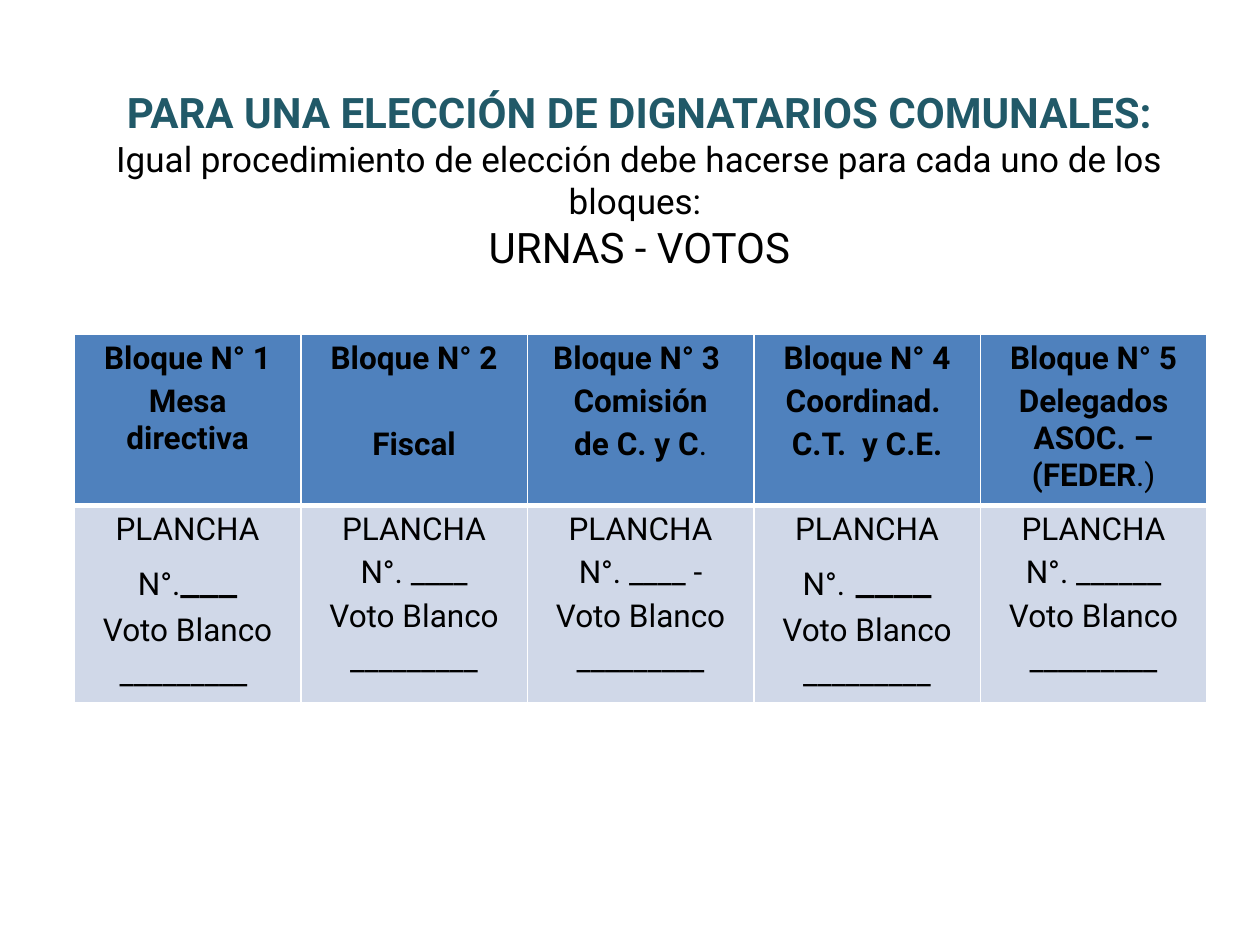
from dataclasses import dataclass
from typing import NamedTuple

from lxml.etree import SubElement
from pptx import Presentation
from pptx.dml.color import RGBColor as Rgb
from pptx.enum.text import MSO_ANCHOR as Anchor, PP_ALIGN as Align
from pptx.oxml.ns import qn
from pptx.util import Inches, Pt


@dataclass(frozen=True)
class Theme:
    font: str = "Roboto"
    ink: str = "000000"
    teal: str = "215968"
    head: str = "4F81BD"
    body: str = "D0D8E8"
    rule: str = "FFFFFF"
    big: int = 24
    mid: int = 20
    small: int = 18
    thin: int = 1
    thick: int = 3


THEME = Theme()
LINE = 1.17  # height of a line of the font, in ems


class Run(NamedTuple):
    text: str
    size: int = THEME.small
    bold: bool = False
    color: str = THEME.ink


class Block(NamedTuple):
    """One table column: header lines, then the ballot number and the blank vote."""
    head: list
    number: list
    blank: str = "_________"


def bold(text: str) -> list:
    return [Run(text, bold=True)]


BLOCKS = [
    Block([bold("Bloque N° 1"), bold("Mesa directiva")],
          [Run("N°."), Run("___", THEME.big)], "_________ "),
    Block([bold("Bloque N° 2"), [], bold("Fiscal")], [Run("N°. ____")]),
    Block([bold("Bloque N° 3 "), bold("Comisión"), bold("de C. y C") + [Run(".")]],
          [Run("N°. ____ -")]),
    Block([bold("Bloque N° 4"), bold("Coordinad. "), bold("C.T.  y C.E.")],
          [Run("N°."), Run(" ____", THEME.big)]),
    Block([bold("Bloque N° 5"), bold("Delegados ASOC. – (FEDER") + [Run(".)")]],
          [Run("N°. ______")]),
]
TITLE = [
    [Run("PARA UNA ELECCIÓN DE DIGNATARIOS COMUNALES:", THEME.big, True, THEME.teal)],
    [Run("Igual procedimiento de elección debe hacerse para cada uno de los bloques: ",
         THEME.mid)],
    [Run("URNAS - VOTOS", THEME.big)],
]


def write(frame, lines: list, *, gap: float = 0) -> None:
    """Fill a frame with centred lines; gap is a share of the type size.

    An empty line becomes space before the next one.
    """
    frame.word_wrap = True
    skip = 0.0
    first = True
    for line in lines:
        if not line:
            skip += (LINE + gap) * THEME.small
            continue
        para = frame.paragraphs[0] if first else frame.add_paragraph()
        para.alignment = Align.CENTER
        size = max(run.size for run in line)
        para.space_before = Pt(0 if first else round(skip + gap * size, 1))
        skip, first = 0.0, False
        for item in line:
            run = para.add_run()
            run.text = item.text
            font = run.font
            font.name, font.size, font.bold = THEME.font, Pt(item.size), item.bold
            font.color.rgb = Rgb.from_string(item.color)


def edge(cell, top: int, bottom: int) -> None:
    """Draw the cell borders, widths in points."""
    props = cell._tc.get_or_add_tcPr()
    widths = {"lnL": THEME.thin, "lnR": THEME.thin, "lnT": top, "lnB": bottom}
    for tag, width in widths.items():
        line = SubElement(props, qn(f"a:{tag}"), w=str(Pt(width)))
        fill = SubElement(line, qn("a:solidFill"))
        SubElement(fill, qn("a:srgbClr"), val=THEME.rule)


def paint(cell, lines: list, color: str, top: int, bottom: int) -> None:
    edge(cell, top, bottom)
    cell.fill.solid()
    cell.fill.fore_color.rgb = Rgb.from_string(color)
    write(cell.text_frame, lines, gap=0.2)


def add_title(slide) -> None:
    box = slide.shapes.add_textbox(Inches(0.51), Inches(0.3), Inches(9.13), Inches(1.8))
    frame = box.text_frame
    frame.vertical_anchor = Anchor.TOP
    frame.margin_top = Inches(0.39)
    write(frame, TITLE)


def add_grid(slide) -> None:
    heights = (1.36, 1.53)
    table = slide.shapes.add_table(
        2, len(BLOCKS), Inches(0.59), Inches(2.65), Inches(8.99), Inches(sum(heights))).table
    table.horz_banding = False
    for row, height in zip(table.rows, heights):
        row.height = Inches(height)
    for col, block in enumerate(BLOCKS):
        votes = [[Run("PLANCHA")], block.number, [Run("Voto Blanco")], [Run(block.blank)]]
        paint(table.cell(0, col), block.head, THEME.head, THEME.thin, THEME.thick)
        paint(table.cell(1, col), votes, THEME.body, THEME.thick, THEME.thin)


def main() -> None:
    deck = Presentation()
    deck.slide_width, deck.slide_height = Inches(10), Inches(7.5)
    slide = deck.slides.add_slide(deck.slide_layouts[6])
    add_title(slide)
    add_grid(slide)
    deck.save("out.pptx")


if __name__ == "__main__":
    main()
